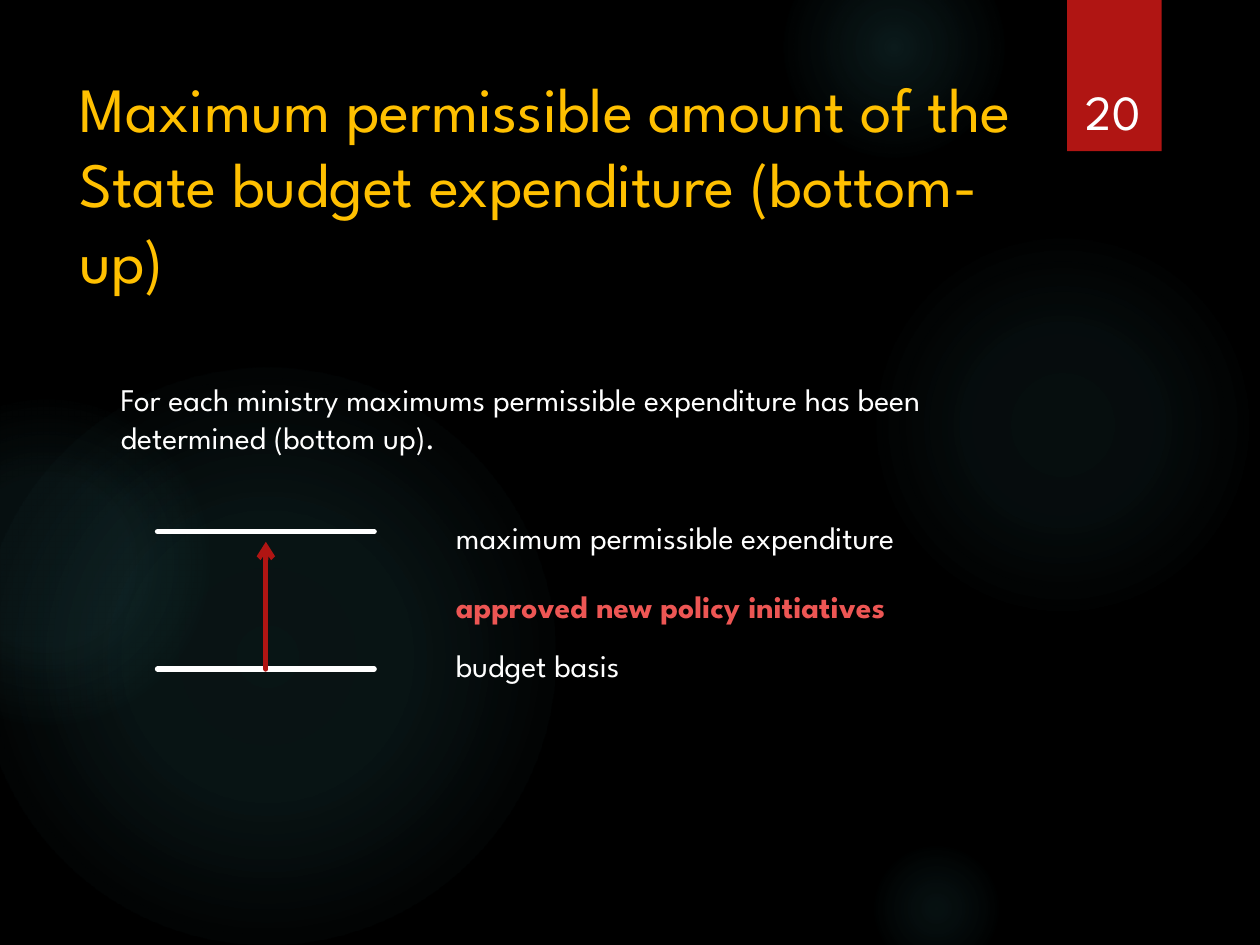
"""Build the slide on the bottom-up maximum of State budget expenditure."""
from dataclasses import dataclass

from lxml import etree
from pptx import Presentation
from pptx.dml.color import RGBColor
from pptx.enum.shapes import MSO_CONNECTOR, MSO_SHAPE
from pptx.enum.text import MSO_ANCHOR, MSO_AUTO_SIZE, PP_ALIGN
from pptx.oxml import parse_xml
from pptx.oxml.ns import nsdecls, qn
from pptx.shapes.connector import Connector
from pptx.slide import Slide
from pptx.text.text import TextFrame
from pptx.util import Inches, Pt

STRAIGHT = MSO_CONNECTOR.STRAIGHT
ELLIPSE = MSO_SHAPE.OVAL
RECTANGLE = MSO_SHAPE.RECTANGLE
TOP, BOTTOM = MSO_ANCHOR.TOP, MSO_ANCHOR.BOTTOM
LEFT, CENTER = PP_ALIGN.LEFT, PP_ALIGN.CENTER
NO_AUTOFIT = MSO_AUTO_SIZE.NONE

BLACK = RGBColor(0x00, 0x00, 0x00)
WHITE = RGBColor(0xFF, 0xFF, 0xFF)
GOLD = RGBColor(0xFF, 0xC0, 0x00)
RED = RGBColor(0xB0, 0x15, 0x13)
CORAL = RGBColor(0xED, 0x56, 0x54)
TEAL = RGBColor(0x50, 0xB9, 0xC1)

FONT = "League Spartan"
TITLE_ONLY = 5
LEVEL_LEFT, LEVEL_RIGHT = 1.25, 2.97
MAXIMUM_Y, BASIS_Y = 4.22, 5.31
ARROW_X = (LEVEL_LEFT + LEVEL_RIGHT) / 2
ARROW_TIP_Y = 4.3
LABEL_LEFT = 3.52


@dataclass
class Glow:
    left: float
    top: float
    diameter: float
    stops: tuple[tuple[int, int], ...]


@dataclass
class Caption:
    text: str
    left: float
    top: float
    width: float
    height: float = 0.4
    size: int = 18
    color: RGBColor = WHITE
    bold: bool = False
    align: PP_ALIGN = LEFT
    anchor: MSO_ANCHOR = TOP


GLOWS = (
    Glow(6.89, 1.83, 3.08, ((0, 7), (36, 6), (69, 0))),
    Glow(6.22, -0.5, 1.75, ((0, 14), (36, 7), (73, 0))),
    Glow(6.89, 6.67, 1.08, ((0, 9), (36, 5), (66, 0))),
    Glow(-0.17, 2.92, 4.58, ((0, 11), (36, 10), (75, 0))),
    Glow(-0.92, 3.17, 2.58, ((0, 8), (36, 8), (72, 0))),
)

TITLE = Caption(
    "Maximum permissible amount of the State budget expenditure (bottom- up)",
    0.53, 0.5, 7.72, 1.53, size=36, color=GOLD,
)

CAPTIONS = (
    Caption(
        "For each ministry maximums permissible expenditure has been "
        "determined (bottom up).",
        0.86, 2.97, 7.11, 0.71,
    ),
    Caption("maximum permissible expenditure", LABEL_LEFT, 4.06, 4.77),
    Caption("approved new policy initiatives", LABEL_LEFT, 4.61, 4.45,
            color=CORAL, bold=True),
    Caption("budget basis", LABEL_LEFT, 5.08, 1.8),
    Caption("20", 8.49, 0.32, 0.69, 0.84, size=28, align=CENTER, anchor=BOTTOM),
)


def add_glow(slide: Slide, glow: Glow) -> None:
    ellipse = slide.shapes.add_shape(
        ELLIPSE, Inches(glow.left), Inches(glow.top),
        Inches(glow.diameter), Inches(glow.diameter),
    )
    ellipse.shadow.inherit = False
    ellipse.line.fill.background()
    stops = "".join(
        f'<a:gs pos="{position * 1000}"><a:srgbClr val="{TEAL}">'
        f'<a:alpha val="{opacity * 1000}"/></a:srgbClr></a:gs>'
        for position, opacity in glow.stops
    )
    gradient = parse_xml(
        f'<a:gradFill {nsdecls("a")} rotWithShape="1"><a:gsLst>{stops}</a:gsLst>'
        '<a:path path="circle"><a:fillToRect l="50000" t="50000" r="50000" '
        'b="50000"/></a:path></a:gradFill>'
    )
    ellipse._element.spPr.find(qn("a:prstGeom")).addnext(gradient)


def add_line(slide: Slide, start: tuple[float, float], end: tuple[float, float],
             color: RGBColor) -> Connector:
    connector = slide.shapes.add_connector(
        STRAIGHT, *(Inches(value) for value in (*start, *end))
    )
    connector.line.color.rgb = color
    connector.line.width = Pt(3)
    connector.line._get_or_add_ln().set("cap", "rnd")
    etree.SubElement(connector._element.spPr, qn("a:effectLst"))
    return connector


def write_caption(frame: TextFrame, caption: Caption) -> None:
    frame.text = caption.text
    frame.word_wrap = True
    frame.auto_size = NO_AUTOFIT
    frame.vertical_anchor = caption.anchor
    paragraph = frame.paragraphs[0]
    paragraph.alignment = caption.align
    font = paragraph.runs[0].font
    font.name = FONT
    font.size = Pt(caption.size)
    font.bold = caption.bold
    font.color.rgb = caption.color


def add_caption(slide: Slide, caption: Caption) -> None:
    box = slide.shapes.add_textbox(
        Inches(caption.left), Inches(caption.top),
        Inches(caption.width), Inches(caption.height),
    )
    write_caption(box.text_frame, caption)


def place_title(slide: Slide, caption: Caption) -> None:
    title = slide.shapes.title
    title.left, title.top = Inches(caption.left), Inches(caption.top)
    title.width, title.height = Inches(caption.width), Inches(caption.height)
    write_caption(title.text_frame, caption)
    slide.shapes._spTree.append(title._element)


def add_number_tab(slide: Slide) -> None:
    tab = slide.shapes.add_shape(
        RECTANGLE, Inches(8.47), Inches(0), Inches(0.75), Inches(1.2)
    )
    tab.shadow.inherit = False
    tab.fill.solid()
    tab.fill.fore_color.rgb = RED
    tab.line.fill.background()


def main() -> None:
    presentation = Presentation()
    presentation.slide_width, presentation.slide_height = Inches(10), Inches(7.5)
    slide = presentation.slides.add_slide(presentation.slide_layouts[TITLE_ONLY])
    slide.background.fill.solid()
    slide.background.fill.fore_color.rgb = BLACK

    for glow in GLOWS:
        add_glow(slide, glow)
    add_number_tab(slide)
    place_title(slide, TITLE)

    for level in (BASIS_Y, MAXIMUM_Y):
        add_line(slide, (LEVEL_LEFT, level), (LEVEL_RIGHT, level), WHITE)
    rise = add_line(slide, (ARROW_X, BASIS_Y), (ARROW_X, ARROW_TIP_Y), RED)
    etree.SubElement(rise.line._get_or_add_ln(), qn("a:tailEnd"), type="arrow")

    for caption in CAPTIONS:
        add_caption(slide, caption)
    presentation.save("out.pptx")


if __name__ == "__main__":
    main()
